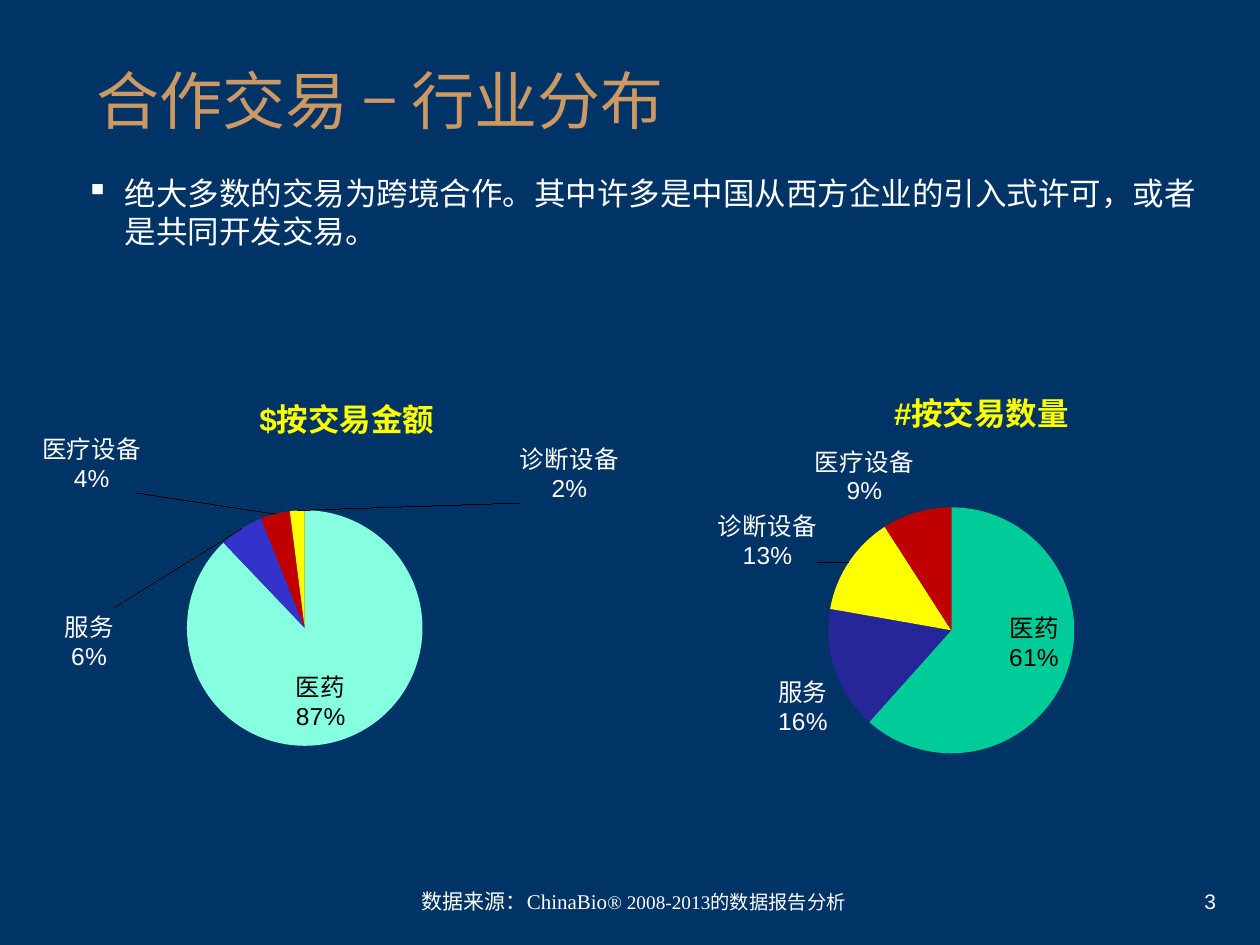
"""Build a slide with two pie charts on partnering deals by industry."""
from lxml.etree import SubElement
from pptx import Presentation
from pptx.chart.data import CategoryChartData as ChartData
from pptx.dml.color import RGBColor as Color
from pptx.enum.chart import XL_CHART_TYPE as ChartType, XL_LABEL_POSITION as LabelPlace
from pptx.enum.text import MSO_ANCHOR as Anchor, PP_ALIGN as Align
from pptx.oxml.ns import qn
from pptx.util import Inches, Pt

COLORS = {
    "navy": "003366", "tan": "CC9864", "white": "FFFFFF", "black": "000000",
    "yellow": "FFFF00", "red": "C00000", "mint": "85FFE0", "green": "00CC99",
    "blue": "3333CC", "indigo": "262699",
}
CELL = Inches(10) // 120

deck = Presentation()
deck.slide_width, deck.slide_height = 120 * CELL, 90 * CELL
page = deck.slides.add_slide(deck.slide_layouts[6])
page.background.fill.solid()
page.background.fill.fore_color.rgb = Color.from_string(COLORS["navy"])


def add_text(text, grid, size=12, font="Times New Roman", color="white",
             align=Align.LEFT, anchor=Anchor.TOP, bullet=None, tail="", tail_size=None):
    box = page.shapes.add_textbox(*(int(n * CELL) for n in grid))
    frame = box.text_frame
    frame.word_wrap, frame.vertical_anchor = True, anchor
    para = frame.paragraphs[0]
    para.alignment = align
    if bullet:
        props = para._p.get_or_add_pPr()
        props.set("marL", str(Inches(0.31)))
        props.set("indent", str(-Inches(0.31)))
        SubElement(props, qn("a:buChar")).set("char", bullet)
    for words, points, face in ((text, size, font), (tail, tail_size or size, "Times New Roman")):
        if words:
            span = para.add_run()
            span.text = words
            span.font.size, span.font.name = Pt(points), face
            span.font.color.rgb = Color.from_string(COLORS[color])


def set_layout(parent, index, **settings):
    for old in parent.findall(qn("c:layout")):
        parent.remove(old)
    layout = SubElement(parent, qn("c:layout"))
    parent.insert(index, layout)
    manual = SubElement(layout, qn("c:manualLayout"))
    for name, value in settings.items():
        SubElement(manual, qn(f"c:{name}")).set("val", str(value))


add_text("合作交易 ", (8, 2, 102, 15), size=36, font="Arial", color="tan",
         anchor=Anchor.MIDDLE, tail="− 行业分布")
add_text("3", (92, 84, 25, 6), font="Arial", align=Align.RIGHT)

pies = [
    {"title": "#按交易数量", "grid": (55, 30.75, 80, 53.25), "title_at": (0.37, 0.1),
     "plot": (0.19, 0.33, 0.51, 0.44),
     "slices": [("医药", 61, "green", None), ("服务", 16, "indigo", None),
                ("诊断设备", 13, "yellow", (-0.03, 0.02)), ("医疗设备", 9, "red", None)]},
    {"title": "$按交易金额", "grid": (4, 31, 65, 44), "title_at": (0.31, 0.13),
     "plot": (0.07, 0.4, 0.63, 0.51),
     "slices": [("医药", 87, "mint", None), ("服务", 6, "blue", (-0.18, 0.32)),
                ("医疗设备", 4, "red", (-0.2, -0.03)), ("诊断设备", 2, "yellow", (0.4, 0))]},
]
for pie in pies:
    data = ChartData()
    data.categories = [row[0] for row in pie["slices"]]
    data.add_series("Series 1", [row[1] for row in pie["slices"]])
    chart = page.shapes.add_chart(
        ChartType.PIE, *(int(n * CELL) for n in pie["grid"]), data).chart
    chart.font.name, chart.font.size = "Arial", Pt(18)
    chart.font.color.rgb = Color.from_string(COLORS["black"])
    chart.has_legend, chart.has_title = False, True
    title = chart.chart_title
    title.text_frame.text = pie["title"]
    font = title.text_frame.paragraphs[0].runs[0].font
    font.name, font.size, font.bold = "Arial", Pt(18), True
    font.color.rgb = Color.from_string(COLORS["yellow"])
    x, y = pie["title_at"]
    set_layout(title._element, 1, xMode="edge", yMode="edge", x=x, y=y)
    x, y, w, h = pie["plot"]
    set_layout(chart._chartSpace.chart.plotArea, 0, layoutTarget="inner",
               xMode="edge", yMode="edge", x=x, y=y, w=w, h=h)
    plot = chart.plots[0]
    plot.vary_by_categories = True
    for index, (name, value, color, shift) in enumerate(pie["slices"]):
        point = plot.series[0].points[index]
        point.format.fill.solid()
        point.format.fill.fore_color.rgb = Color.from_string(COLORS[color])
        point.format.line.fill.background()
        label = point.data_label
        label.font.name, label.font.size = "Arial", Pt(14)
        label.font.color.rgb = Color.from_string(COLORS["white" if index else "black"])
        label.position = LabelPlace.OUTSIDE_END if index else LabelPlace.INSIDE_END
        node = plot.series[0]._element.find(qn("c:dLbls")).findall(qn("c:dLbl"))[index]
        node.find(qn("c:showCatName")).set("val", "1")
        number = SubElement(node, qn("c:numFmt"))
        number.set("formatCode", '0"%"')
        number.set("sourceLinked", "0")
        node.insert(1, number)
        SubElement(node, qn("c:separator")).text = "\n"
        if shift:
            set_layout(node, 1, x=shift[0], y=shift[1])

add_text("数据来源：ChinaBio", (39, 84, 48, 3.6),
         tail="® 2008-2013的数据报告分析", tail_size=11)
add_text("绝大多数的交易为跨境合作。其中许多是中国从西方企业的引入式许可，或者是共同开发交易。",
         (7, 16, 111, 11), size=18, bullet="▪")

deck.save("out.pptx")
